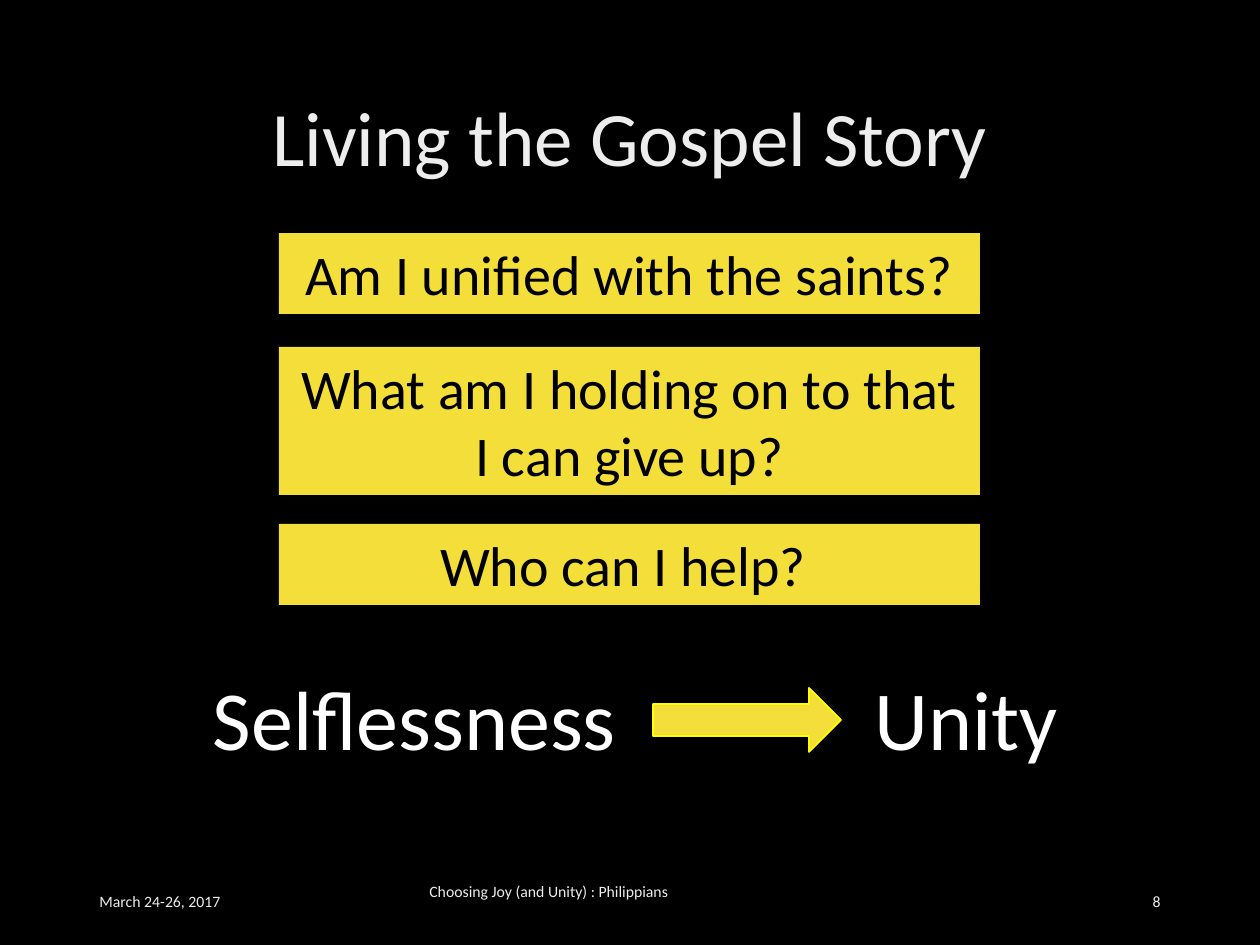
from dataclasses import dataclass

from pptx import Presentation
from pptx.dml.color import RGBColor
from pptx.enum.shapes import MSO_SHAPE
from pptx.enum.text import MSO_ANCHOR, PP_ALIGN
from pptx.util import Emu, Pt

COLORS = {
    "back": "000000",
    "pale": "EDEDED",
    "white": "FFFFFF",
    "gold": "F4DE3A",
    "edge": "FFFF00",
}
FONT = "Calibri"
LEFT, MID, RIGHT = PP_ALIGN.LEFT, PP_ALIGN.CENTER, PP_ALIGN.RIGHT


@dataclass
class Label:
    text: str
    box: tuple[int, int, int, int]
    size: int
    color: str
    align: PP_ALIGN = MID
    wrap: bool = True
    anchor: MSO_ANCHOR = MSO_ANCHOR.MIDDLE
    foot: int = 6  # bottom inset


def px(count: int) -> Emu:
    return Emu(round(count * 914400 / 126))


def rgb(name: str) -> RGBColor:
    return RGBColor.from_string(COLORS[name])


def write(shape, label: Label) -> None:
    frame = shape.text_frame
    frame.text = label.text
    frame.word_wrap = label.wrap
    frame.vertical_anchor = label.anchor
    frame.margin_bottom = px(label.foot)
    line = frame.paragraphs[0]
    line.alignment = label.align
    font = line.runs[0].font
    font.name, font.size = FONT, Pt(label.size)
    font.color.rgb = rgb(label.color)


def add_label(slide, label: Label):
    shape = slide.shapes.add_textbox(*map(px, label.box))
    write(shape, label)
    return shape


def add_block(slide, kind: MSO_SHAPE, box: tuple[int, int, int, int]):
    shape = slide.shapes.add_shape(kind, *map(px, box))
    shape.shadow.inherit = False
    shape.fill.solid()
    shape.fill.fore_color.rgb = rgb("gold")
    shape.line.fill.background()
    return shape


def add_card(slide, label: Label) -> None:
    write(add_block(slide, MSO_SHAPE.RECTANGLE, label.box), label)


TITLE = Label("Living the Gospel Story", (87, 50, 1086, 183), 44, "pale")
CARDS = [
    Label(text, (279, top, 701, high), 32, "back", anchor=MSO_ANCHOR.TOP)
    for text, top, high in [
        ("Am I unified with the saints?", 233, 81),
        ("What am I holding on to that I can give up?", 347, 148),
        ("Who can I help? ", 524, 81),
    ]
]
WORDS = [
    Label(text, (left, 661, wide, 111), 48, "white", wrap=False)
    for text, left, wide in [("Selflessness", 194, 441), ("Unity", 861, 210)]
]
FOOTER = [
    Label(text, (left, 876, wide, 50), 9, "pale", align, foot=foot)
    for text, left, wide, align, foot in [
        ("March 24-26, 2017", 87, 284, LEFT, 6),
        ("Choosing Joy (and Unity) : Philippians", 417, 426, LEFT, 25),
        ("8", 890, 283, RIGHT, 6),
    ]
]


def main() -> None:
    deck = Presentation()
    deck.slide_width, deck.slide_height = px(1260), px(945)
    slide = deck.slides.add_slide(deck.slide_layouts[6])
    slide.background.fill.solid()
    slide.background.fill.fore_color.rgb = rgb("back")

    title = add_label(slide, TITLE)
    title.text_frame.paragraphs[0].line_spacing = 0.9
    for card in CARDS:
        add_card(slide, card)
    for label in WORDS + FOOTER:
        add_label(slide, label)

    arrow = add_block(slide, MSO_SHAPE.RIGHT_ARROW, (653, 688, 188, 64))
    arrow.line.color.rgb = rgb("edge")
    arrow.line.width = Pt(1)
    deck.save("out.pptx")


if __name__ == "__main__":
    main()
